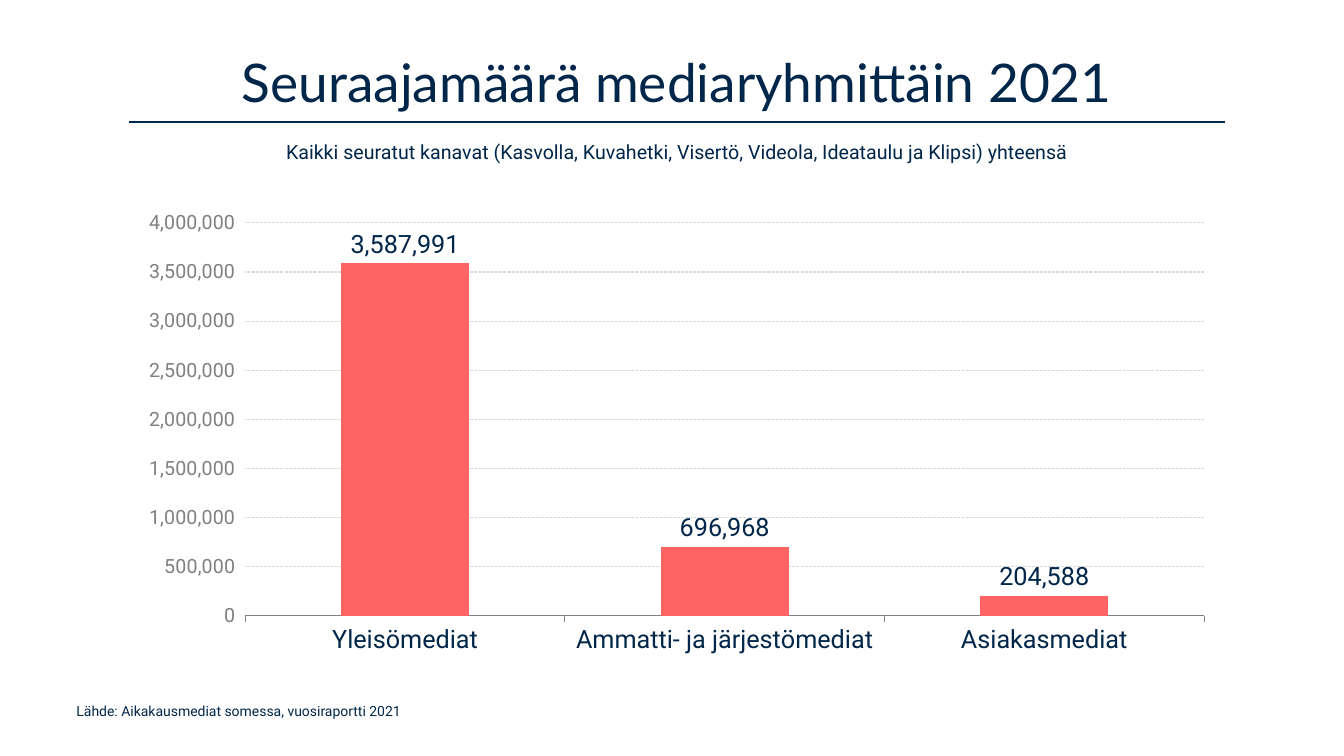
"""Build the slide on follower counts by media group in 2021."""
from lxml import etree
from pptx import Presentation
from pptx.chart.data import CategoryChartData
from pptx.dml.color import RGBColor
from pptx.enum import chart as ch, dml, shapes, text
from pptx.oxml import ns
from pptx.util import Inches, Pt

NAVY = RGBColor(0x00, 0x26, 0x49)
CORAL = RGBColor(0xFF, 0x64, 0x64)
GREY = RGBColor(0x80, 0x80, 0x80)
LIGHT_GREY = RGBColor(0xD9, 0xD9, 0xD9)


def style_font(font, size, color, name="Roboto"):
    values = {"size": Pt(size), "name": name, "bold": False}
    for key, value in values.items():
        setattr(font, key, value)
    font.color.rgb = color


prs = Presentation()
prs.slide_width, prs.slide_height = Inches(13.33), Inches(7.5)
slide = prs.slides.add_slide(prs.slide_layouts[6])

title_rule = slide.shapes.add_connector(
    shapes.MSO_CONNECTOR.STRAIGHT, Inches(1.28), Inches(1.21), Inches(12.15), Inches(1.21))
title_rule.line.color.rgb = NAVY
title_rule.line.width = Pt(1)
etree.SubElement(title_rule._element.spPr, ns.qn("a:effectLst"))

LEFT, CENTER = text.PP_ALIGN.LEFT, text.PP_ALIGN.CENTER
TOP, MIDDLE = text.MSO_ANCHOR.TOP, text.MSO_ANCHOR.MIDDLE
texts = [
    ("Lähde: Aikakausmediat somessa, vuosiraportti 2021",
     (0.66, 6.92, 6.58, 0.44), 10, "Roboto", LEFT, TOP, 1.0),
    ("Seuraajamäärä mediaryhmittäin 2021",
     (1.28, 0.49, 10.87, 0.71), 38, "Lato", CENTER, MIDDLE, 0.9),
    ("Kaikki seuratut kanavat (Kasvolla, Kuvahetki, Visertö, Videola, Ideataulu ja Klipsi) yhteensä",
     (1.28, 1.34, 10.87, 0.34), 14, "Roboto", CENTER, TOP, 1.0),
]
for wording, place, size, face, align, anchor, spacing in texts:
    frame = slide.shapes.add_textbox(*map(Inches, place)).text_frame
    frame.word_wrap = True
    frame.vertical_anchor = anchor
    line = frame.paragraphs[0]
    line.text = wording
    line.alignment = align
    line.line_spacing = spacing
    style_font(line.runs[0].font, size, NAVY, face)

followers = CategoryChartData(number_format="#,##0")
followers.categories = ["Yleisömediat", "Ammatti- ja järjestömediat", "Asiakasmediat"]
followers.add_series("Seuraajat", (3587991, 696968, 204588))
chart = slide.shapes.add_chart(
    ch.XL_CHART_TYPE.COLUMN_CLUSTERED,
    Inches(1.26), Inches(2), Inches(10.9), Inches(4.59), followers).chart
chart.has_legend = False
chart.has_title = False
style_font(chart.font, 18, NAVY)

plot = chart.plots[0]
plot.gap_width = 150
plot.vary_by_categories = False
bars = plot.series[0].format.fill
bars.solid()
bars.fore_color.rgb = CORAL

plot.has_data_labels = True
label_format = {
    "show_value": True,
    "number_format": "#,##0",
    "number_format_is_linked": False,
    "position": ch.XL_LABEL_POSITION.OUTSIDE_END,
}
for key, value in label_format.items():
    setattr(plot.data_labels, key, value)
style_font(plot.data_labels.font, 18, NAVY)

groups = chart.category_axis
groups.major_tick_mark = ch.XL_TICK_MARK.OUTSIDE
groups.format.line.color.rgb = GREY
groups.format.line.width = Pt(0.75)
style_font(groups.tick_labels.font, 18, NAVY)

counts = chart.value_axis
scale = {
    "minimum_scale": 0,
    "maximum_scale": 4000000,
    "major_unit": 500000,
    "major_tick_mark": ch.XL_TICK_MARK.OUTSIDE,
    "has_major_gridlines": True,
}
for key, value in scale.items():
    setattr(counts, key, value)
counts.format.line.fill.background()
counts.tick_labels.number_format = "#,##0"
counts.tick_labels.number_format_is_linked = False
style_font(counts.tick_labels.font, 14, GREY)
gridlines = counts.major_gridlines.format.line
gridlines.color.rgb = LIGHT_GREY
gridlines.width = Pt(0.75)
gridlines.dash_style = dml.MSO_LINE.SQUARE_DOT

prs.save("out.pptx")
